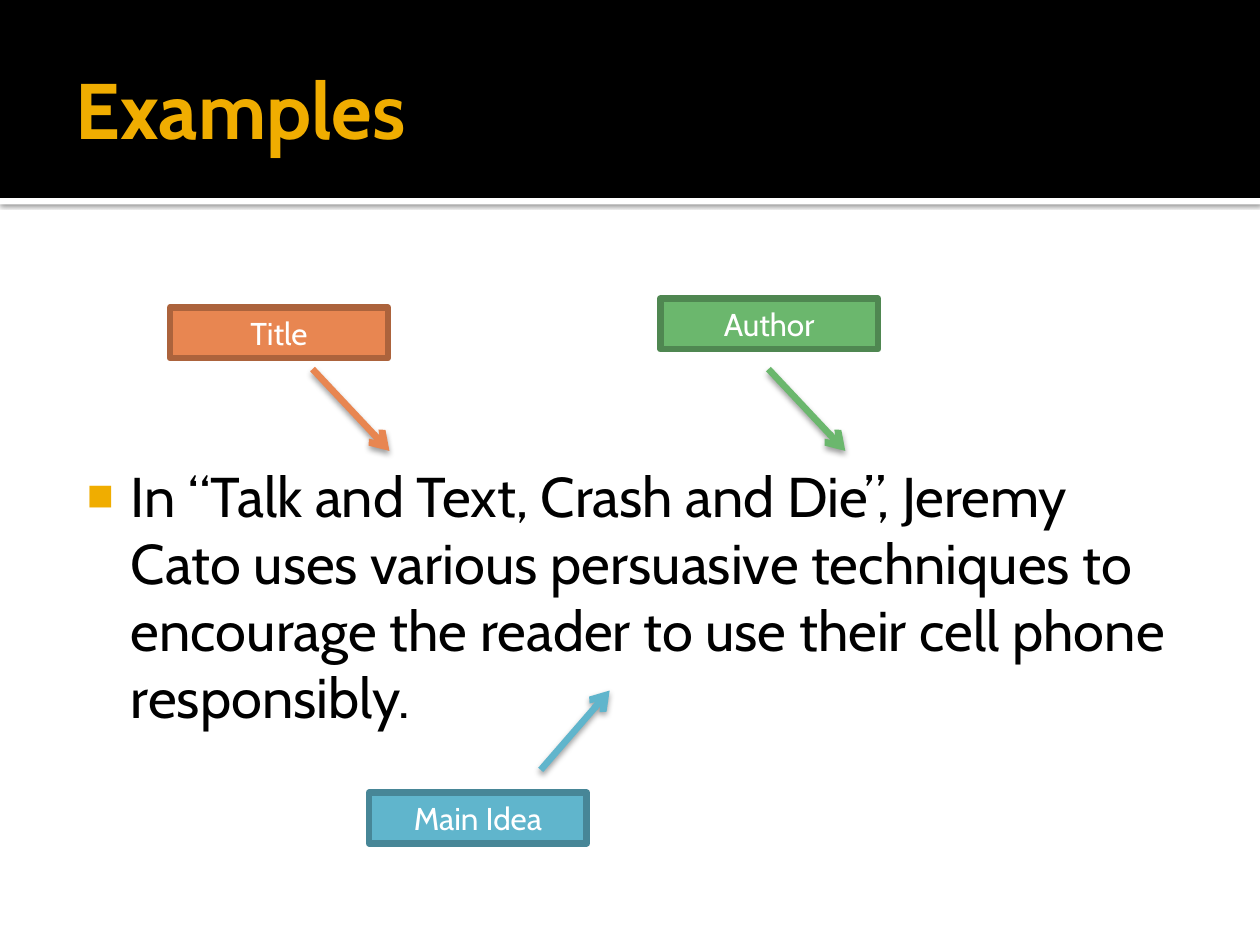
import pptx
import pptx.util
import pptx.dml.color
import pptx.enum.shapes
import pptx.enum.text
import pptx.oxml
import pptx.oxml.ns
from lxml import etree

Cm, Pt = pptx.util.Cm, pptx.util.Pt
qn = pptx.oxml.ns.qn

FONT = "Cabin"
GOLD, BLACK, WHITE = "F0AD00", "000000", "FFFFFF"
HEADING = "Examples"
SENTENCE = ("In “Talk and Text, Crash and Die”, Jeremy Cato uses various persuasive "
            "techniques to encourage the reader to use their cell phone responsibly.")
# label, fill, border, box corner, arrow start, arrow end (cm)
CALLOUTS = [
    ("Title", "E88651", "AC633C", (3.43, 6.2), (6.3, 7.44), (7.85, 9.09)),
    ("Author", "6BB76D", "4F8751", (13.31, 6.02), (15.49, 7.44), (17.04, 9.09)),
    ("Main Idea", "60B5CC", "478697", (7.44, 15.98), (10.9, 15.52), (12.29, 13.92)),
]
SLIDE_WIDTH, SLIDE_HEIGHT = 25.4, 19.05
BAND_HEIGHT, RULE_HEIGHT = 3.99, 0.13
MARGIN = 1.27
TEXT_WIDTH = SLIDE_WIDTH - 2 * MARGIN
CALLOUT_SIZE = (4.39, 1.02)
STROKE = Pt(3.78)


def rgb(color):
    return pptx.dml.color.RGBColor.from_string(color)


def add_shadow(properties, blur, distance, opacity):
    """Give a shape or connector a black shadow that falls straight down."""
    effects = properties.find(qn("a:effectLst"))
    if effects is None:
        effects = etree.SubElement(properties, qn("a:effectLst"))
    shadow = etree.SubElement(effects, qn("a:outerShdw"), blurRad=str(Pt(blur)),
                              dist=str(Pt(distance)), dir="5400000", rotWithShape="0")
    tint = etree.SubElement(shadow, qn("a:srgbClr"), val=BLACK)
    etree.SubElement(tint, qn("a:alpha"), val=str(opacity * 1000))


def add_rectangle(slide, left, top, width, height, fill, border=None):
    rectangle = slide.shapes.add_shape(pptx.enum.shapes.MSO_SHAPE.RECTANGLE,
                                       Cm(left), Cm(top), Cm(width), Cm(height))
    rectangle.shadow.inherit = False
    rectangle.fill.solid()
    rectangle.fill.fore_color.rgb = rgb(fill)
    if border:
        rectangle.line.color.rgb = rgb(border)
        rectangle.line.width = STROKE
    else:
        rectangle.line.fill.background()
    return rectangle


def add_text_area(slide, left, top, width, height, margins):
    frame = slide.shapes.add_textbox(Cm(left), Cm(top), Cm(width), Cm(height)).text_frame
    frame.word_wrap = True
    (frame.margin_left, frame.margin_top,
     frame.margin_right, frame.margin_bottom) = [Cm(margin) for margin in margins]
    return frame


def add_run(paragraph, text, size, color, bold=False):
    run = paragraph.add_run()
    run.text = text
    run.font.name = FONT
    run.font.size = Pt(size)
    run.font.bold = bold
    run.font.color.rgb = rgb(color)


def add_square_bullet(paragraph):
    properties = paragraph._p.get_or_add_pPr()
    properties.set("marL", str(Cm(1.22)))
    properties.set("indent", str(-Cm(0.89)))
    bullet_color = etree.SubElement(properties, qn("a:buClr"))
    etree.SubElement(bullet_color, qn("a:srgbClr"), val=GOLD)
    etree.SubElement(properties, qn("a:buSzPct"), val="80000")
    etree.SubElement(properties, qn("a:buFont"), typeface="Arial")
    etree.SubElement(properties, qn("a:buChar"), char="■")


def add_arrow(slide, start, end, color):
    arrow = slide.shapes.add_connector(pptx.enum.shapes.MSO_CONNECTOR.STRAIGHT,
                                       *[Cm(value) for value in start + end])
    arrow.line.color.rgb = rgb(color)
    arrow.line.width = STROKE
    etree.SubElement(arrow.line._get_or_add_ln(), qn("a:tailEnd"), type="arrow")
    add_shadow(arrow._element.spPr, 3.5, 2, 38)


def add_label(slide, label, fill, border, corner):
    box = add_rectangle(slide, *corner, *CALLOUT_SIZE, fill, border)
    box.text_frame.vertical_anchor = pptx.enum.text.MSO_ANCHOR.MIDDLE
    paragraph = box.text_frame.paragraphs[0]
    paragraph.alignment = pptx.enum.text.PP_ALIGN.CENTER
    add_run(paragraph, label, 18, WHITE)


def main():
    deck = pptx.Presentation()
    deck.slide_width, deck.slide_height = Cm(SLIDE_WIDTH), Cm(SLIDE_HEIGHT)
    slide = deck.slides.add_slide(deck.slide_layouts[6])

    rule = add_rectangle(slide, 0, BAND_HEIGHT, SLIDE_WIDTH, RULE_HEIGHT, WHITE)
    add_shadow(rule._element.spPr, 2.5, 0.8, 60)
    add_rectangle(slide, 0, 0, SLIDE_WIDTH, BAND_HEIGHT, BLACK)

    heading = add_text_area(slide, MARGIN, 0.43, TEXT_WIDTH, 3.48, (0.25, 0.13, 0.13, 0.13))
    heading.vertical_anchor = pptx.enum.text.MSO_ANCHOR.MIDDLE
    add_run(heading.paragraphs[0], HEADING, 45, GOLD, bold=True)

    body = add_text_area(slide, MARGIN, 9.3, TEXT_WIDTH, 8.48, (0.15, 0, 0.25, 0.13))
    add_square_bullet(body.paragraphs[0])
    add_run(body.paragraphs[0], SENTENCE, 32, BLACK)

    for label, fill, border, corner, start, end in CALLOUTS:
        add_arrow(slide, start, end, fill)
        add_label(slide, label, fill, border, corner)

    deck.save("out.pptx")


if __name__ == "__main__":
    main()
